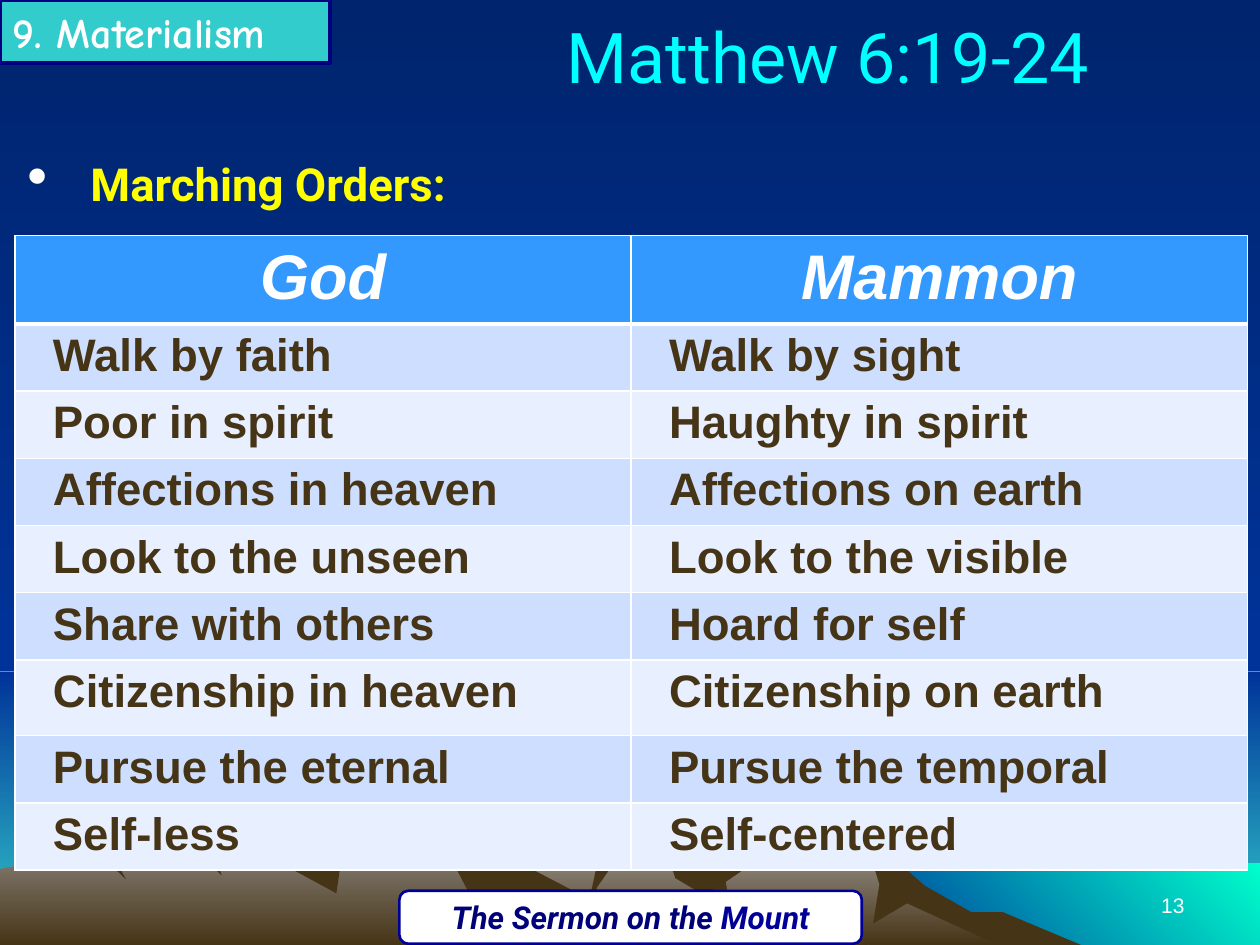
"""Build the Matthew 6:19-24 slide contrasting God and Mammon."""
import pptx
import pptx.dml.color
import pptx.enum.shapes
import pptx.enum.text
import pptx.oxml
import pptx.oxml.ns
import pptx.util
from lxml import etree

PX = 9144
C = {
    "sky": "3399FF", "night": "00246D", "blue": "003399", "teal": "33CCCC",
    "sea": "00FFCC", "earth": "463416", "rock": "A5A29F", "stone": "938F8B",
    "white": "FFFFFF", "navy": "000080", "ink": "000078", "royal": "000099",
    "cyan": "00FFFF", "yellow": "FFFF00", "band": "CEDEFF", "pale": "E8EFFF",
}
RGB = {k: pptx.dml.color.RGBColor.from_string(v) for k, v in C.items()}
ALIGN = pptx.enum.text.PP_ALIGN
ANCHOR = pptx.enum.text.MSO_ANCHOR
SHAPE = pptx.enum.shapes.MSO_SHAPE
GROW = pptx.enum.text.MSO_AUTO_SIZE.SHAPE_TO_FIT_TEXT
qn = pptx.oxml.ns.qn


def write(tf, runs, size, name, align=ALIGN.LEFT, **style):
    p = tf.paragraphs[0]
    p.alignment = align
    for text, color in runs:
        r = p.add_run()
        r.text = text
        fmt = {"size": pptx.util.Pt(size), "name": name, **style}
        for key, value in fmt.items():
            setattr(r.font, key, value)
        r.font.color.rgb = RGB[color]
    return p


def paint(s, colors, angle=270):
    s.shadow.inherit = False
    if len(colors) == 1:
        s.fill.solid()
        s.fill.fore_color.rgb = RGB[colors[0]]
    else:
        s.fill.gradient()
        s.fill.gradient_angle = angle
        for stop, color in zip(s.fill.gradient_stops, colors):
            stop.color.rgb = RGB[color]


prs = pptx.Presentation()
prs.slide_width, prs.slide_height = 1000 * PX, 750 * PX
slide = prs.slides.add_slide(prs.slide_layouts[6])
slide.background.fill.solid()
slide.background.fill.fore_color.rgb = RGB["sky"]

bands = [
    (["blue", "teal"], 270, (0, 533, 1000, 217)),
    (["night", "blue"], 270, (0, 0, 1000, 533)),
    (["blue", "sea"], 45, (683, 685, 317, 65)),
]
for colors, angle, box in bands:
    s = slide.shapes.add_shape(SHAPE.RECTANGLE, *[v * PX for v in box])
    paint(s, colors, angle)
    s.line.fill.background()

ground = [
    (["rock", "earth"], [
        (821, 750), (764, 723), (723, 698), (685, 660), (613, 681), (566, 697),
        (536, 690), (471, 658), (355, 698), (258, 750)]),
    (["earth"], [
        (796, 724), (771, 724), (734, 703), (685, 660), (698, 702), (693, 733),
        (720, 717), (792, 750), (858, 750)]),
    (["earth"], [(471, 658), (473, 690), (465, 727), (474, 704), (497, 671)]),
    (["earth"], [(529, 676), (536, 697), (580, 723), (576, 700), (592, 689)]),
    (["stone", "earth"], [
        (690, 750), (432, 712), (354, 665), (236, 681), (208, 658), (68, 662),
        (26, 685), (0, 690), (0, 750)]),
    (["earth"], [(213, 659), (208, 669), (232, 690), (267, 709), (271, 682)]),
    (["earth"], [
        (354, 665), (337, 687), (363, 691), (374, 712), (407, 727), (472, 727),
        (690, 750), (455, 707), (411, 684)]),
    (["earth"], [(148, 667), (168, 669), (176, 695)]),
    (["earth"], [(69, 662), (111, 669), (93, 685), (100, 698), (77, 676)]),
]
for colors, points in ground:
    builder = slide.shapes.build_freeform(*points[0], scale=PX)
    builder.add_line_segments(points[1:], close=True)
    s = builder.convert_to_shape()
    paint(s, colors)
    s.line.fill.background()

boxes = [
    (None, (717, 683, 233, 50), None, ANCHOR.BOTTOM, [("13", "white")],
     {"size": 12, "name": "Arial", "align": ALIGN.RIGHT}),
    (SHAPE.RECTANGLE, (0, 0, 262, 50), ("teal", "navy", 2), ANCHOR.TOP,
     [("9. Materialism", "white")],
     {"size": 24, "name": "Comic Neue", "bold": True}),
    (None, (325, 6, 664, 77), None, ANCHOR.TOP, [("Matthew 6:19-24", "cyan")],
     {"size": 40, "name": "Roboto", "align": ALIGN.CENTER}),
    (None, (12, 119, 977, 54), None, ANCHOR.TOP, [("Marching Orders:", "yellow")],
     {"size": 26, "name": "Roboto", "bold": True}),
    (SHAPE.ROUNDED_RECTANGLE, (317, 707, 367, 42), ("white", "royal", 1.5),
     ANCHOR.MIDDLE, [("The Sermon on the ", "ink"), ("Mount", "royal")],
     {"size": 18, "name": "Roboto", "align": ALIGN.CENTER, "bold": True,
      "italic": True}),
]
for kind, box, look, anchor, runs, fmt in boxes:
    at = [v * PX for v in box]
    if kind is None:
        s = slide.shapes.add_textbox(*at)
    else:
        s = slide.shapes.add_shape(kind, *at)
        paint(s, look[:1])
        s.line.color.rgb = RGB[look[1]]
        s.line.width = pptx.util.Pt(look[2])
    tf = s.text_frame
    tf.word_wrap = True
    tf.vertical_anchor = anchor
    if anchor == ANCHOR.TOP:
        tf.auto_size = GROW
    p = write(tf, runs, **fmt)
    if runs[0][0] == "Marching Orders:":
        pPr = p._p.get_or_add_pPr()
        pPr.set("marL", str(50 * PX))
        pPr.set("indent", str(-50 * PX))
        clr = etree.SubElement(pPr, qn("a:buClr"))
        etree.SubElement(clr, qn("a:srgbClr"), val=C["white"])
        etree.SubElement(pPr, qn("a:buSzPct"), val="130000")
        etree.SubElement(pPr, qn("a:buChar"), char="•")

rows = [
    ("God", "Mammon"),
    ("Walk by faith", "Walk by sight"),
    ("Poor in spirit", "Haughty in spirit"),
    ("Affections in heaven", "Affections on earth"),
    ("Look to the unseen", "Look to the visible"),
    ("Share with others", "Hoard for self"),
    ("Citizenship in heaven", "Citizenship on earth"),
    ("Pursue the eternal", "Pursue the temporal"),
    ("Self-less", "Self-centered"),
]
heights = {0: 70, 6: 60}
total = sum(heights.get(i, 53) for i in range(len(rows)))
table = slide.shapes.add_table(
    len(rows), 2, 12 * PX, 187 * PX, 978 * PX, total * PX).table
head = {"size": 36, "align": ALIGN.CENTER, "italic": True}
for i, row in enumerate(rows):
    table.rows[i].height = heights.get(i, 53) * PX
    for j, text in enumerate(row):
        cell = table.cell(i, j)
        tcPr = cell._tc.get_or_add_tcPr()
        for side in "LRTB":
            thick = (i, side) in [(0, "B"), (1, "T")]
            ln = etree.SubElement(tcPr, qn("a:ln" + side), w="38100" if thick else "12700")
            solid = etree.SubElement(ln, qn("a:solidFill"))
            etree.SubElement(solid, qn("a:srgbClr"), val=C["white"])
        cell.fill.solid()
        cell.fill.fore_color.rgb = RGB["sky" if i == 0 else "band" if i % 2 else "pale"]
        if i:
            cell.margin_left = 30 * PX
        fmt = {"size": 26, "italic": False} if i else head
        write(cell.text_frame, [(text, "earth" if i else "white")],
              name="Arial", bold=True, **fmt)

prs.save("out.pptx")
